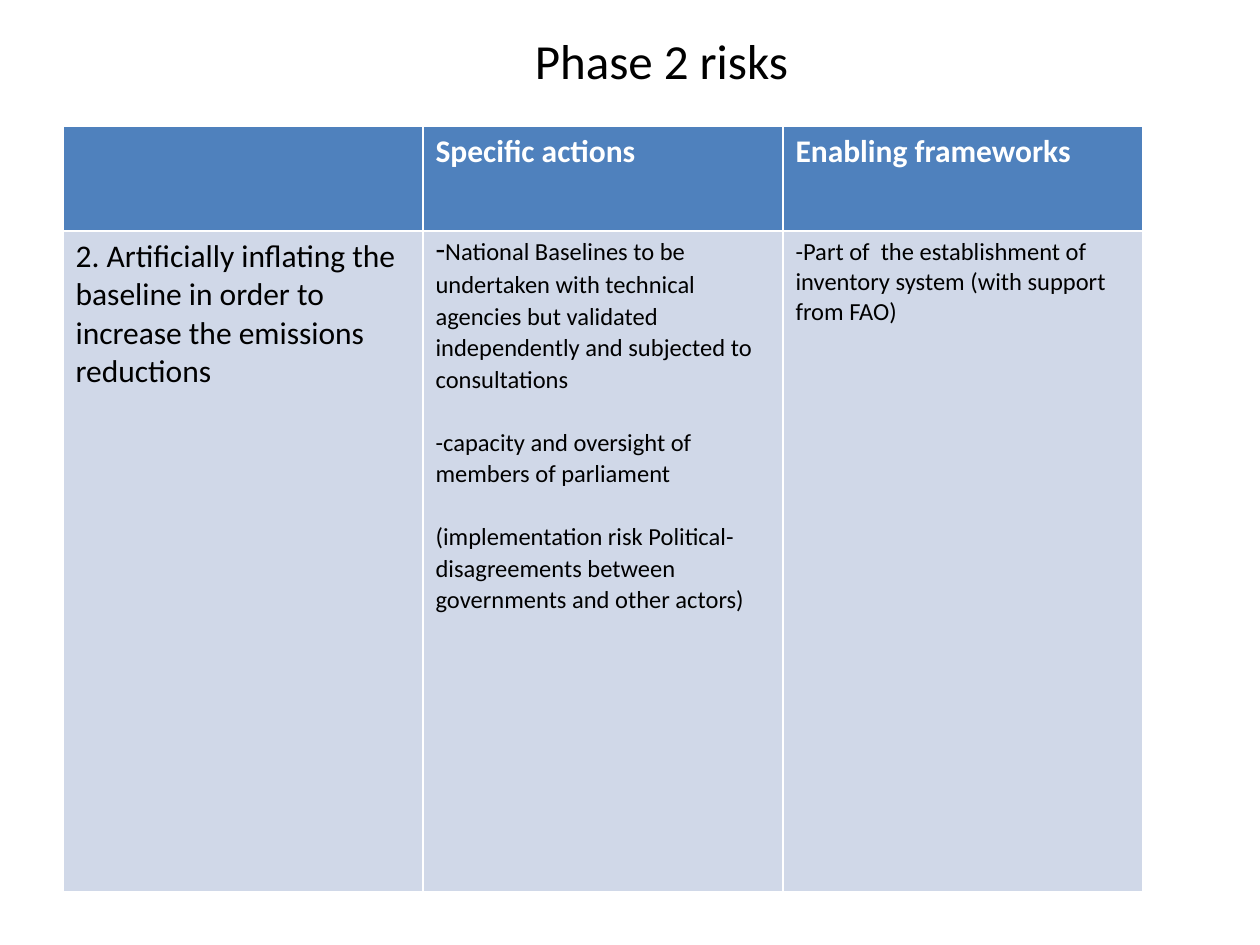
import pptx
import pptx.dml.color
import pptx.enum.text
import pptx.util

# Content: a cell is a list of paragraphs, a paragraph a list of (text, size)
TITLE = "Phase 2 risks"
HEADINGS = ["", "Specific actions", "Enabling frameworks"]
RISK = [[("2. Artificially inflating the baseline in order to increase the "
          "emissions reductions", 18)]]
ACTIONS = [
    [("-", 18), ("National Baselines to be undertaken with technical agencies but "
                 "validated independently and subjected to consultations", 14)],
    [("-capacity and oversight of members of parliament", 14)],
    [("(implementation risk Political-disagreements between governments and "
      "other actors)", 14)],
]
FRAMEWORKS = [[("-Part of  the establishment of inventory system (with support "
                "from FAO)", 14)]]
ROWS = [[[[(heading, 18)]] for heading in HEADINGS], [RISK, ACTIONS, FRAMEWORKS]]

# Layout in px
SCALE = 914400 / 126
TITLE_BOX = (126, -42, 1071, 203)
TABLE_LEFT, TABLE_TOP = 63, 126
COLUMN_WIDTH = 360
ROW_HEIGHTS = [105, 661]
ACTION_LEADING = pptx.util.Pt(18)

FONT = "Calibri"
COLORS = {"header": "4F81BD", "body": "D0D8E8", "light": "FFFFFF", "dark": "000000"}


def emu(px):
    return pptx.util.Emu(round(px * SCALE))


def color(name):
    return pptx.dml.color.RGBColor.from_string(COLORS[name])


def style_font(font, ink, size, bold=False):
    font.name = FONT
    font.size = pptx.util.Pt(size)
    font.bold = bold
    font.color.rgb = color(ink)


def fill_cell(cell, paragraphs, is_header):
    cell.fill.solid()
    cell.fill.fore_color.rgb = color("header" if is_header else "body")
    frame = cell.text_frame
    for index, runs in enumerate(paragraphs):
        paragraph = frame.add_paragraph() if index else frame.paragraphs[0]
        style_font(paragraph.font, "light" if is_header else "dark",
                   runs[-1][1], is_header)
        if paragraphs is ACTIONS:
            paragraph.line_spacing = ACTION_LEADING
            if index:
                paragraph.space_before = ACTION_LEADING
        for text, size in runs:
            if text:
                run = paragraph.add_run()
                run.text = text
                if size != runs[-1][1]:
                    run.font.size = pptx.util.Pt(size)


deck = pptx.Presentation()
deck.slide_width, deck.slide_height = emu(1260), emu(945)
slide = deck.slides.add_slide(deck.slide_layouts[6])

# Risk table
table = slide.shapes.add_table(
    len(ROWS), len(HEADINGS), emu(TABLE_LEFT), emu(TABLE_TOP),
    emu(COLUMN_WIDTH * len(HEADINGS)), emu(sum(ROW_HEIGHTS))).table
for column in table.columns:
    column.width = emu(COLUMN_WIDTH)
for row_index, (height, cells) in enumerate(zip(ROW_HEIGHTS, ROWS)):
    table.rows[row_index].height = emu(height)
    for column_index, paragraphs in enumerate(cells):
        fill_cell(table.cell(row_index, column_index), paragraphs, row_index == 0)

# Title
title = slide.shapes.add_textbox(*map(emu, TITLE_BOX)).text_frame
title.word_wrap = True
title.vertical_anchor = pptx.enum.text.MSO_ANCHOR.MIDDLE
title.text = TITLE
title.paragraphs[0].alignment = pptx.enum.text.PP_ALIGN.CENTER
style_font(title.paragraphs[0].font, "dark", 28)

deck.save("out.pptx")
